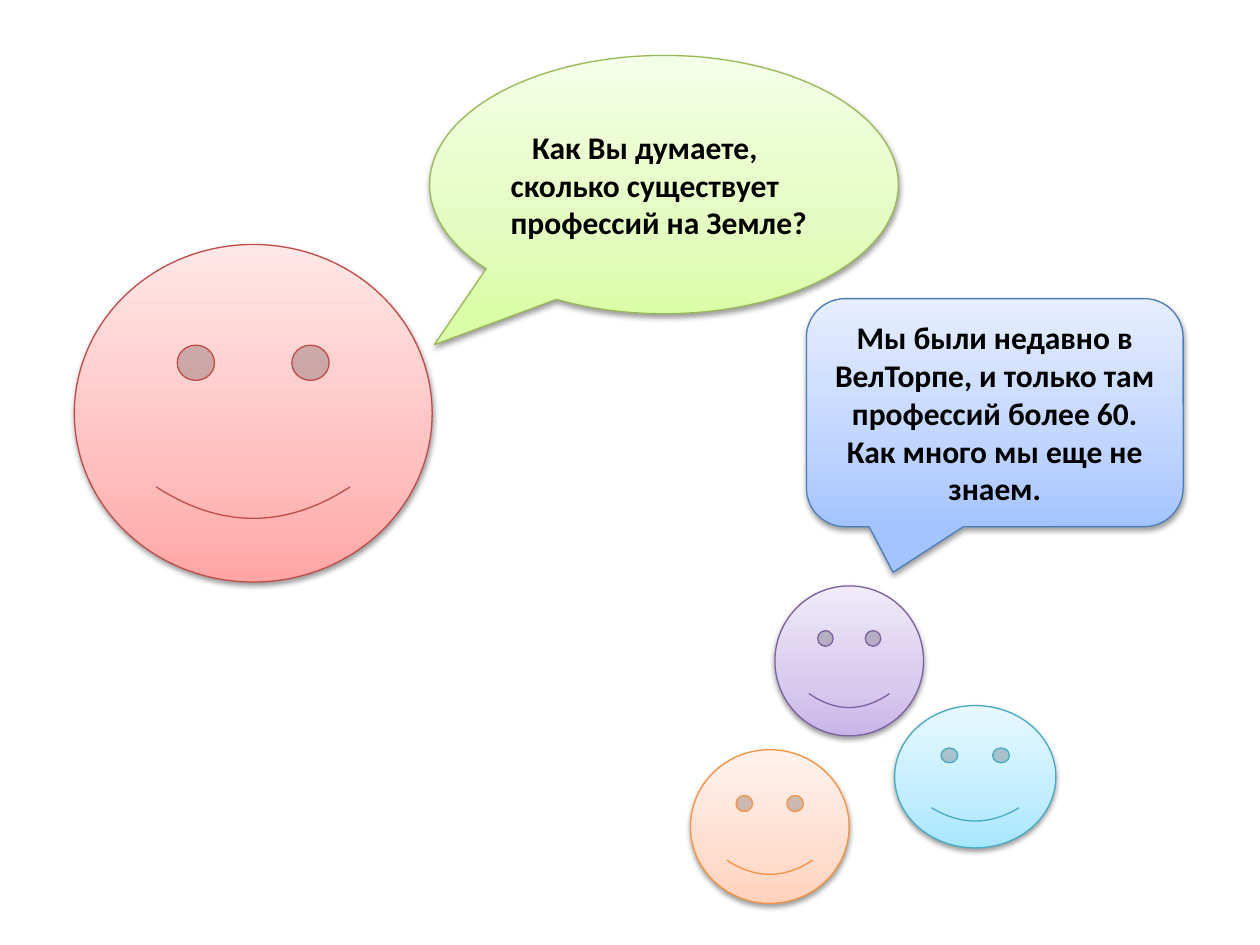
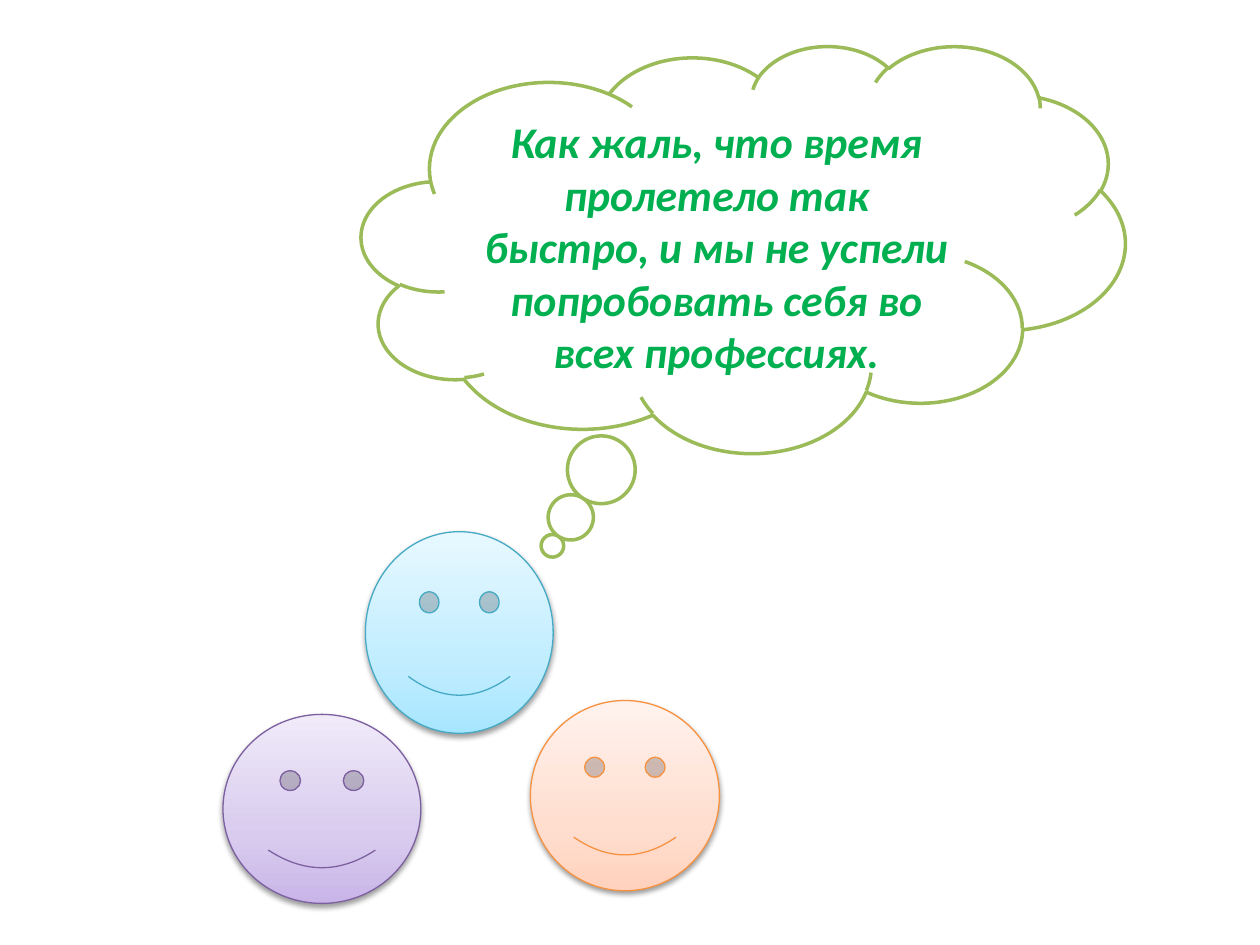
from copy import deepcopy
from lxml import etree
from pptx import Presentation, util as u
from pptx.dml.color import RGBColor
from pptx.enum import shapes, text
from pptx.oxml.ns import qn

KIND = shapes.MSO_SHAPE
ALIGN = text.PP_ALIGN
COLS, ROWS = 100, 75

TONES = {
    "red": ("FFA6A5", "FFC0BF", "FFE7E7", "BF4C48"),
    "green": ("DAFDA7", "E4FCC2", "F5FFE7", "98B955"),
    "aqua": ("A7E6FF", "C1EDFF", "E7F8FF", "46AAC5"),
    "peach": ("FFD2BD", "FFDED0", "FFF2ED", "F69240"),
    "lilac": ("C9B5E8", "D8CBEE", "F0EAF9", "7D60A0"),
    "blue": ("A4C4FF", "BFD4FF", "E6EEFF", "4B7EBC"),
}
STOPS = (0, 0.35, 1)
SPEECH = {"size": u.Pt(18), "bold": True, "name": "Calibri"}
THOUGHT = {"size": u.Pt(25), "bold": True, "italic": True, "name": "Calibri"}


def color(code):
    return RGBColor.from_string(code)


def apply(target, values):
    for name, value in values.items():
        setattr(target, name, value)


class Deck:
    def __init__(self):
        self.file = Presentation()
        apply(self.file, {"slide_width": u.Inches(10), "slide_height": u.Inches(7.5)})
        self.slide = None

    def page(self):
        self.slide = self.file.slides.add_slide(self.file.slide_layouts[6])

    def shape(self, kind, box, line, width, bends=()):
        col, row = self.file.slide_width / COLS, self.file.slide_height / ROWS
        place = [round(n * unit) for n, unit in zip(box, (col, row, col, row))]
        item = self.slide.shapes.add_shape(kind, *place)
        item.shadow.inherit = False
        item.line.color.rgb = color(line)
        item.line.width = u.Pt(width)
        for i, bend in enumerate(bends):
            item.adjustments[i] = bend
        return item

    def glow(self, kind, box, tone, bends=()):
        *shades, line = TONES[tone]
        item = self.shape(kind, box, line, 0.75, bends)
        item.fill.gradient()
        item.fill.gradient_angle = 90
        props = item._element.spPr
        stops = props.find(".//" + qn("a:gsLst"))
        stops.insert(1, deepcopy(stops[0]))
        for stop, spot, shade in zip(item.fill.gradient_stops, STOPS, shades):
            stop.position = spot
            stop.color.rgb = color(shade)
        shadow = etree.SubElement(
            props.find(qn("a:effectLst")), qn("a:outerShdw"),
            blurRad=str(u.Pt(3.1)), dist=str(u.Pt(1.6)), dir="5400000", rotWithShape="0")
        black = etree.SubElement(shadow, qn("a:srgbClr"), val="000000")
        etree.SubElement(black, qn("a:alpha"), val="38000")
        return item

    def face(self, tone, *box):
        self.glow(KIND.SMILEY_FACE, box, tone)

    def cloud(self, box, line, bends):
        item = self.shape(KIND.CLOUD_CALLOUT, box, line, 2, bends)
        item.fill.solid()
        item.fill.fore_color.rgb = color("FFFFFF")
        return item

    def words(self, item, lines, font, ink, align=ALIGN.CENTER, **frame):
        body = item.text_frame
        apply(body, {"word_wrap": True, "vertical_anchor": text.MSO_ANCHOR.MIDDLE, **frame})
        body.text = "\n".join(lines)
        for para in body.paragraphs:
            para.alignment = align
            for run in para.runs:
                apply(run.font, font)
                run.font.color.rgb = color(ink)
        return body


def ask(deck):
    deck.page()
    deck.face("red", 5.9, 19.4, 28.4, 26.8)
    oval = deck.glow(KIND.OVAL_CALLOUT, (34.1, 4.4, 37.2, 20.5), "green", (-0.49, 0.62))
    body = deck.words(oval, ["Как Вы думаете, сколько существует профессий на Земле?"],
                      SPEECH, "000000", ALIGN.LEFT)
    body.paragraphs[0]._p.get_or_add_pPr().set("indent", str(u.Inches(0.17)))
    deck.face("aqua", 71, 56, 12.8, 11.3)
    deck.face("peach", 54.8, 59.5, 12.6, 12.2)
    deck.face("lilac", 61.5, 46.5, 11.8, 11.9)
    reply = deck.glow(KIND.ROUNDED_RECTANGULAR_CALLOUT, (64, 23.7, 29.9, 18.1), "blue",
                      (-0.27, 0.7, 0.17))
    deck.words(reply, ["Мы были недавно в ВелТорпе, и только там профессий более 60.",
                       "Как много мы еще не знаем."], SPEECH, "000000")


def regret(deck):
    deck.page()
    deck.face("lilac", 17.7, 56.7, 15.7, 15)
    deck.face("peach", 42.1, 55.6, 15, 15.1)
    deck.face("aqua", 29, 42.2, 14.9, 16)
    cloud = deck.cloud((28.7, 3.6, 60.6, 32.3), "9BBB59", (-0.25, 0.73))
    deck.words(cloud, ["Как жаль, что время пролетело так быстро, и мы не успели "
                       "попробовать себя во всех профессиях."], THOUGHT, "00B050",
               margin_top=u.Inches(0.16), margin_bottom=u.Inches(0.05))


def main():
    deck = Deck()
    ask(deck)
    regret(deck)
    deck.file.save("out.pptx")


if __name__ == "__main__":
    main()
